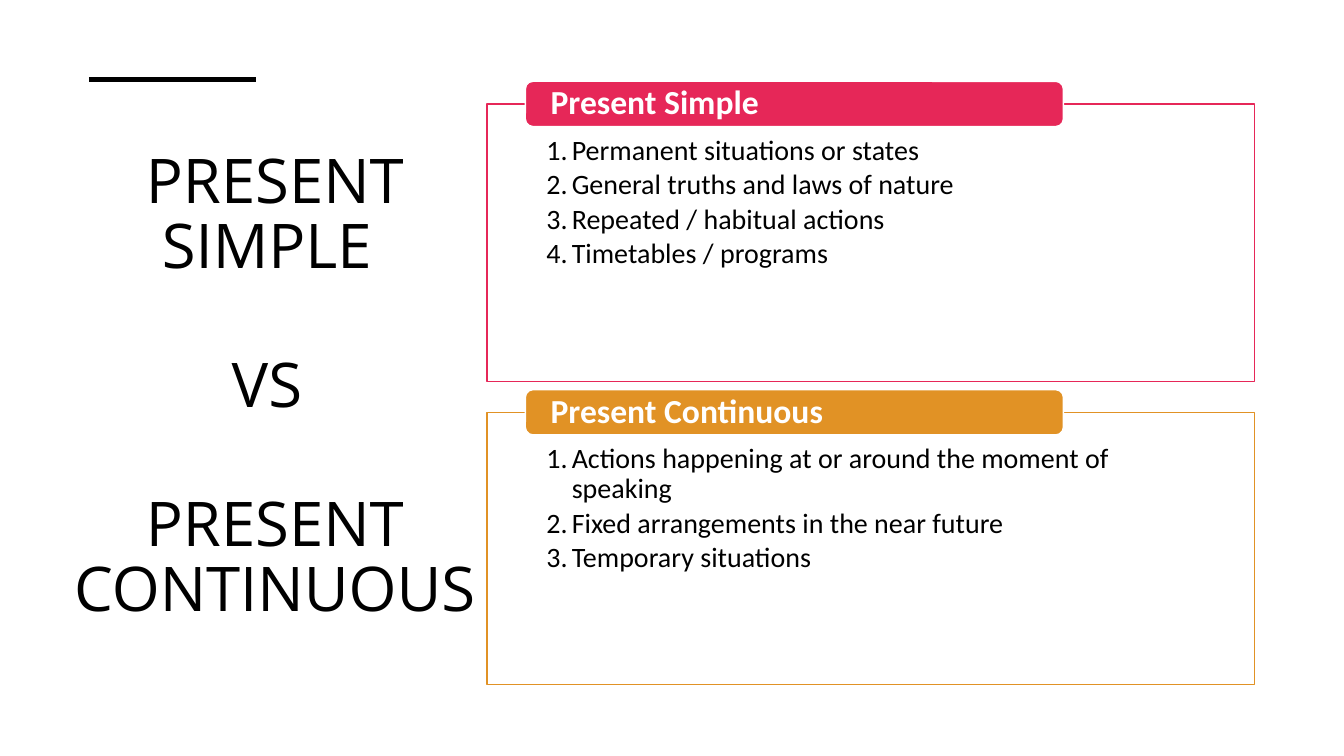
from lxml import etree
from pptx import Presentation
from pptx.dml.color import RGBColor
from pptx.enum.shapes import MSO_CONNECTOR, MSO_SHAPE
from pptx.enum.text import MSO_ANCHOR, PP_ALIGN
from pptx.oxml.ns import qn
from pptx.util import Cm, Pt

STRAIGHT = MSO_CONNECTOR.STRAIGHT
RECT, ROUNDED = MSO_SHAPE.RECTANGLE, MSO_SHAPE.ROUNDED_RECTANGLE
LEFT, CENTER = PP_ALIGN.LEFT, PP_ALIGN.CENTER
TOP, MIDDLE = MSO_ANCHOR.TOP, MSO_ANCHOR.MIDDLE
BLACK, WHITE = "000000", "FFFFFF"


def rgb(value):
    return RGBColor.from_string(value)


class Deck:
    heading_font = "Open Sans"
    body_font = "Calibri"
    card_left, card_width = 12.27, 19.35

    def __init__(self):
        self.prs = Presentation()
        self.prs.slide_width, self.prs.slide_height = Cm(33.87), Cm(19.05)
        self.s = self.prs.slides.add_slide(self.prs.slide_layouts[6])

    def set_text(self, sp, lines, size, font, color=BLACK, bold=False, align=LEFT,
                 anchor=MIDDLE, spacing=0.9, gap=0, insets=(0.25, 0.13, 0.25, 0.13),
                 numbered=False):
        tf = sp.text_frame
        tf.word_wrap = True
        tf.vertical_anchor = anchor
        tf.margin_left, tf.margin_top, tf.margin_right, tf.margin_bottom = map(Cm, insets)
        tf.text = "\n".join(lines)
        for i, p in enumerate(tf.paragraphs):
            p.alignment = align
            p.line_spacing = spacing
            if i:
                p.space_before = Pt(gap)
            if numbered:
                self.number(p)
            for r in p.runs:
                r.font.name, r.font.size, r.font.bold = font, Pt(size), bold
                r.font.color.rgb = rgb(color)

    def number(self, p):
        pPr = p._p.get_or_add_pPr()
        pPr.set("marL", str(Cm(0.64)))
        pPr.set("indent", str(-Cm(0.64)))
        etree.SubElement(pPr, qn("a:buFont"), typeface="+mj-lt")
        etree.SubElement(pPr, qn("a:buAutoNum"), type="arabicPeriod")

    def title(self, x, y, w, h, lines):
        sp = self.s.shapes.add_textbox(Cm(x), Cm(y), Cm(w), Cm(h))
        self.set_text(sp, lines, 44, self.heading_font, align=CENTER,
                      spacing=0.88, gap=53)

    def rule(self, x1, x2, y):
        line = self.s.shapes.add_connector(STRAIGHT, Cm(x1), Cm(y), Cm(x2), Cm(y))
        line.line.color.rgb = rgb(BLACK)
        line.line.width = Pt(3.5)
        etree.SubElement(line._element.spPr, qn("a:effectLst"))

    def box(self, kind, x, y, w, h, fill, line):
        sp = self.s.shapes.add_shape(kind, Cm(x), Cm(y), Cm(w), Cm(h))
        sp.shadow.inherit = False
        sp.fill.solid()
        sp.fill.fore_color.rgb = rgb(fill)
        sp.line.color.rgb = rgb(line)
        sp.line.width = Pt(1)
        return sp

    def card(self, y, h, color, heading, items):
        # Outlined body with a numbered list
        body = self.box(RECT, self.card_left, y, self.card_width, h, WHITE, color)
        self.set_text(body, items, 20, self.body_font, anchor=TOP, gap=3,
                      insets=(1.5, 0.81, 1.5, 0.41), numbered=True)
        # Heading tab centred on the top edge
        tab_h = 1.14
        tab = self.box(ROUNDED, self.card_left + 0.97, y - tab_h / 2, 13.56, tab_h,
                       color, WHITE)
        tab.adjustments[0] = 0.17
        self.set_text(tab, [heading], 24, self.body_font, WHITE, bold=True,
                      insets=(0.58, 0, 0.58, 0))


def main():
    deck = Deck()

    # Title column
    deck.title(1.57, 2.51, 10.72, 14.53,
               ["PRESENT SIMPLE ", "VS ", "PRESENT CONTINUOUS"])
    deck.rule(2.24, 6.45, 2)

    # Tense cards
    deck.card(2.62, 6.99, "E62758", "Present Simple", [
        "Permanent situations or states",
        "General truths and laws of nature",
        "Repeated / habitual actions",
        "Timetables / programs",
    ])
    deck.card(10.39, 6.86, "E19225", "Present Continuous", [
        "Actions happening at or around the moment of speaking",
        "Fixed arrangements in the near future",
        "Temporary situations",
    ])

    deck.prs.save("out.pptx")


if __name__ == "__main__":
    main()
